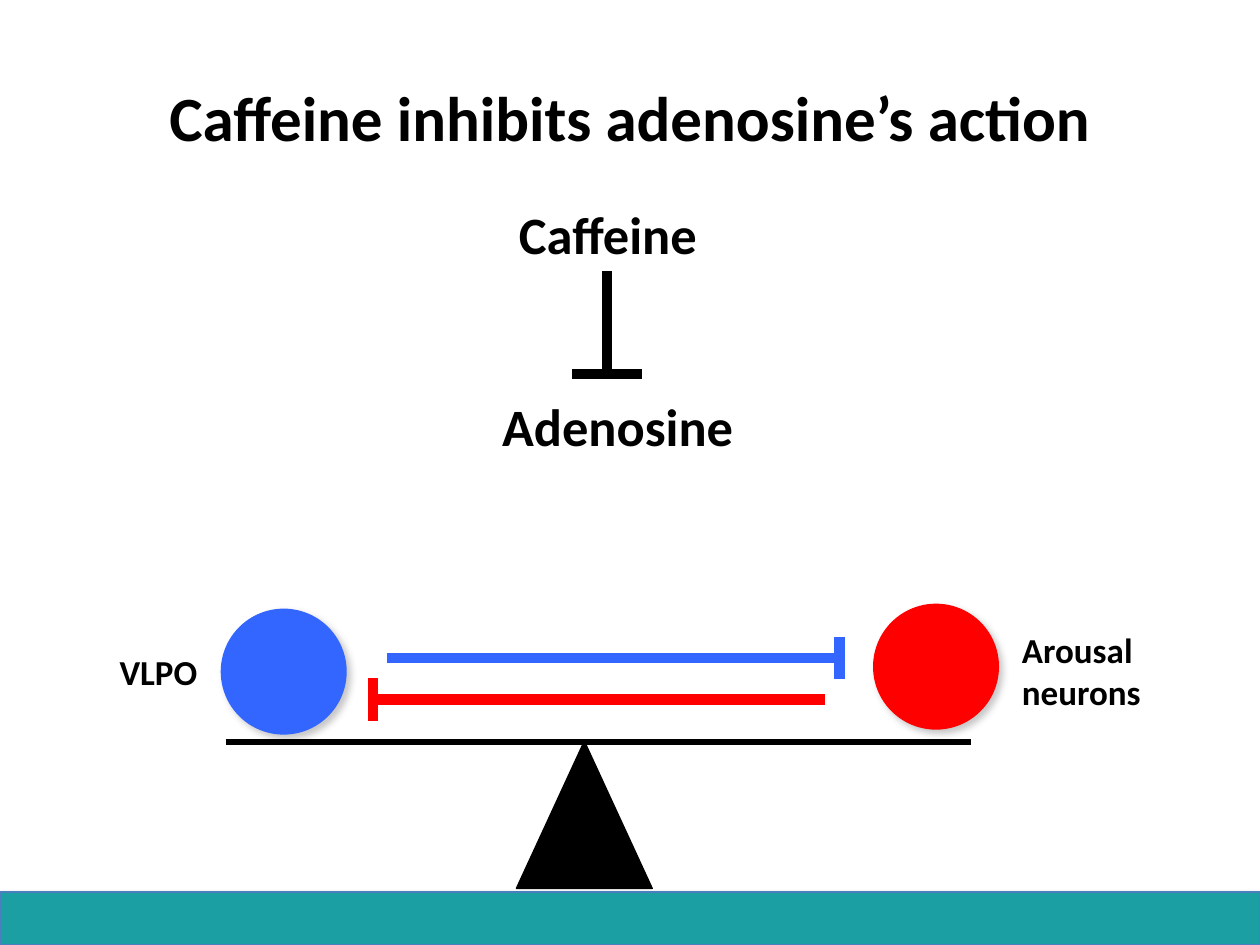
from lxml.etree import SubElement
from pptx import Presentation
from pptx.dml.color import RGBColor
from pptx.enum.shapes import MSO_CONNECTOR, MSO_SHAPE
from pptx.enum.text import MSO_ANCHOR, MSO_AUTO_SIZE, PP_ALIGN
from pptx.oxml.ns import qn
from pptx.util import Cm, Pt

COLORS = {
    "text": "000000",
    "sleep": "3366FF",
    "arousal": "FF0000",
    "band": "1C9FA3",
    "band_line": "4B7EBC",
    "band_shadow": "000000",
    "neuron_shadow": "808080",
}
FONT = "Calibri"


def rgb(name):
    return RGBColor.from_string(COLORS[name])


def add_shadow(shape, color, alpha, blur, distance, angle):
    """Give the shape an outer shadow; alpha in percent, angle in degrees."""
    effects = shape._element.spPr.find(qn("a:effectLst"))
    outer = SubElement(effects, qn("a:outerShdw"), blurRad=str(Pt(blur)),
                       dist=str(Pt(distance)), dir=str(angle * 60000),
                       rotWithShape="0")
    tint = SubElement(outer, qn("a:srgbClr"), val=COLORS[color])
    SubElement(tint, qn("a:alpha"), val=str(alpha * 1000))


def add_solid(slide, preset, left, top, width, height, fill, line=None):
    shape = slide.shapes.add_shape(preset, Cm(left), Cm(top), Cm(width), Cm(height))
    shape.shadow.inherit = False
    shape.fill.solid()
    shape.fill.fore_color.rgb = rgb(fill)
    if line:
        shape.line.color.rgb = rgb(line)
        shape.line.width = Pt(0.75)
    else:
        shape.line.fill.background()
    return shape


def add_line(shapes, x1, y1, x2, y2, color, weight):
    line = shapes.add_connector(MSO_CONNECTOR.STRAIGHT, Cm(x1), Cm(y1), Cm(x2), Cm(y2))
    line.line.color.rgb = rgb(color)
    line.line.width = Pt(weight)
    SubElement(line._element.spPr, qn("a:effectLst"))


def add_inhibition(slide, x1, y1, x2, y2, bar, color):
    """Draw a grouped line that ends in a crossbar of the given length."""
    shapes = slide.shapes.add_group_shape().shapes
    add_line(shapes, x1, y1, x2, y2, color, 6)
    dx, dy = (bar / 2, 0) if x1 == x2 else (0, bar / 2)
    add_line(shapes, x2 - dx, y2 - dy, x2 + dx, y2 + dy, color, 6)


def style_text(frame, size, align):
    for paragraph in frame.paragraphs:
        paragraph.alignment = align
        for run in paragraph.runs:
            run.font.name = FONT
            run.font.size = Pt(size)
            run.font.bold = True
            run.font.color.rgb = rgb("text")


def add_label(slide, text, left, top, width, height, size,
              align=PP_ALIGN.LEFT, wrap=False):
    frame = slide.shapes.add_textbox(Cm(left), Cm(top), Cm(width), Cm(height)).text_frame
    frame.text = text
    frame.word_wrap = wrap
    frame.auto_size = MSO_AUTO_SIZE.SHAPE_TO_FIT_TEXT
    style_text(frame, size, align)


def add_band(slide, left, top, width, height):
    band = add_solid(slide, MSO_SHAPE.RECTANGLE, left, top, width, height,
                     "band", "band_line")
    add_shadow(band, "band_shadow", 35, 3.1, 1.8, 90)


def fill_title(slide, left, top, width, height):
    title = slide.shapes.title
    title.left, title.top, title.width, title.height = map(Cm, (left, top, width, height))
    frame = title.text_frame
    frame.text = "Caffeine inhibits adenosine’s action"
    frame.vertical_anchor = MSO_ANCHOR.MIDDLE
    style_text(frame, 36, PP_ALIGN.CENTER)


def add_caffeine_pathway(slide, left, top):
    for molecule, dx, dy in (("Caffeine", 0, 0), ("Adenosine", 0.2, 3.88)):
        add_label(slide, molecule, left + dx, top + dy, 5.51, 1.55, 30,
                  PP_ALIGN.CENTER, wrap=True)
    stem = left + 2.74
    add_inhibition(slide, stem, top + 1.52, stem, top + 3.6, 1.42, "text")


def add_sleep_balance(slide, left, top):
    """Draw the two neuron groups on a beam, inhibiting each other."""
    add_solid(slide, MSO_SHAPE.ISOSCELES_TRIANGLE, left + 8.25, top + 2.77,
              2.74, 2.97, "text", "text")
    for color, dx, dy in (("sleep", 2.29, 0.1), ("arousal", 15.44, 0)):
        neurons = add_solid(slide, MSO_SHAPE.OVAL, left + dx, top + dy, 2.54, 2.54, color)
        add_shadow(neurons, "neuron_shadow", 43, 4, 3, 45)
    for color, start, end, dy in (("sleep", 5.64, 14.76, 1.09),
                                  ("arousal", 14.48, 5.36, 1.93)):
        add_inhibition(slide, left + start, top + dy, left + end, top + dy, 0.85, color)
    add_label(slide, "VLPO", left, top + 0.81, 2.08, 1.12, 20)
    add_label(slide, "Arousal\nneurons", left + 18.19, top + 0.38, 2.97, 1.96, 20)
    add_line(slide.shapes, left + 2.39, top + 2.79, left + 17.42, top + 2.79, "text", 3)


def main():
    prs = Presentation()
    prs.slide_width, prs.slide_height = Cm(25.4), Cm(19.05)
    slide = prs.slides.add_slide(prs.slide_layouts[5])
    add_band(slide, 0, 17.98, 25.4, 1.07)
    fill_title(slide, 1.27, 0.76, 22.86, 3.18)
    add_caffeine_pathway(slide, 9.5, 3.94)
    add_sleep_balance(slide, 2.16, 12.17)
    prs.save("out.pptx")


if __name__ == "__main__":
    main()
